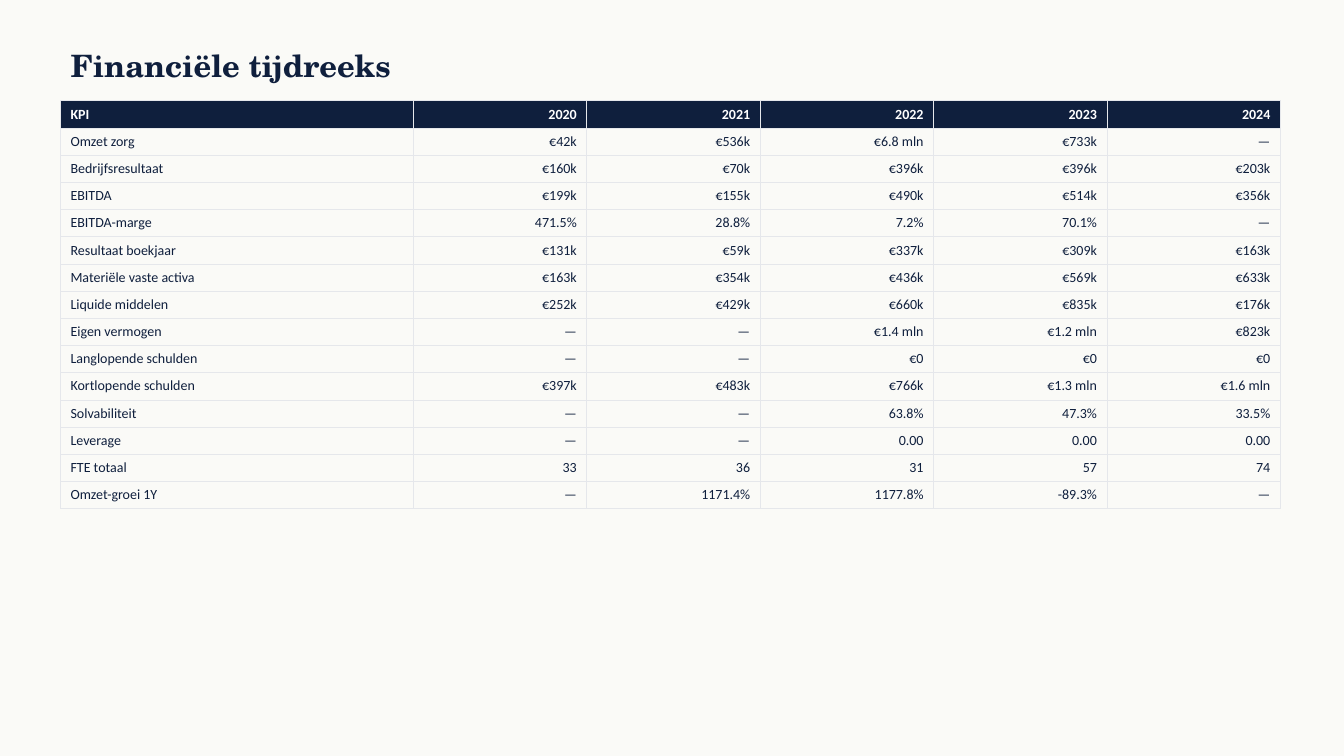
from dataclasses import dataclass

from lxml.etree import SubElement
from pptx import Presentation
from pptx.dml.color import RGBColor
from pptx.enum.text import MSO_ANCHOR, MSO_AUTO_SIZE, PP_ALIGN
from pptx.oxml.ns import qn
from pptx.util import Inches, Pt


@dataclass(frozen=True)
class Theme:
    paper: str = "FAFAF7"
    navy: str = "0F1F3D"
    white: str = "FFFFFF"
    rule: str = "E5E7EB"
    heading_font: str = "TeX Gyre Schola"
    body_font: str = "Calibri"
    heading_size: int = 22
    body_size: int = 10
    rule_width: float = 0.5


THEME = Theme()

KPI_ROWS = [
    ("KPI", "2020", "2021", "2022", "2023", "2024"),
    ("Omzet zorg", "€42k", "€536k", "€6.8 mln", "€733k", "—"),
    ("Bedrijfsresultaat", "€160k", "€70k", "€396k", "€396k", "€203k"),
    ("EBITDA", "€199k", "€155k", "€490k", "€514k", "€356k"),
    ("EBITDA-marge", "471.5%", "28.8%", "7.2%", "70.1%", "—"),
    ("Resultaat boekjaar", "€131k", "€59k", "€337k", "€309k", "€163k"),
    ("Materiële vaste activa", "€163k", "€354k", "€436k", "€569k", "€633k"),
    ("Liquide middelen", "€252k", "€429k", "€660k", "€835k", "€176k"),
    ("Eigen vermogen", "—", "—", "€1.4 mln", "€1.2 mln", "€823k"),
    ("Langlopende schulden", "—", "—", "€0", "€0", "€0"),
    ("Kortlopende schulden", "€397k", "€483k", "€766k", "€1.3 mln", "€1.6 mln"),
    ("Solvabiliteit", "—", "—", "63.8%", "47.3%", "33.5%"),
    ("Leverage", "—", "—", "0.00", "0.00", "0.00"),
    ("FTE totaal", "33", "36", "31", "57", "74"),
    ("Omzet-groei 1Y", "—", "1171.4%", "1177.8%", "-89.3%", "—"),
]
COLUMN_WIDTHS = [3.5] + [1.72] * 5
ROW_HEIGHT = 0.27


def write(frame, text, *, size=THEME.body_size, font=THEME.body_font,
          color=THEME.navy, bold=False, align=PP_ALIGN.LEFT):
    paragraph = frame.paragraphs[0]
    paragraph.alignment = align
    run = paragraph.add_run()
    run.text = text
    run.font.size = Pt(size)
    run.font.name = font
    run.font.bold = bold
    run.font.color.rgb = RGBColor.from_string(color)


def add_borders(cell):
    properties = cell._tc.get_or_add_tcPr()
    for side in ("a:lnL", "a:lnR", "a:lnT", "a:lnB"):
        line = SubElement(properties, qn(side), w=str(Pt(THEME.rule_width)))
        fill = SubElement(line, qn("a:solidFill"))
        SubElement(fill, qn("a:srgbClr"), val=THEME.rule)


prs = Presentation()
prs.slide_width, prs.slide_height = Inches(13.33), Inches(7.5)
slide = prs.slides.add_slide(prs.slide_layouts.get_by_name("Title Only"))
slide.background.fill.solid()
slide.background.fill.fore_color.rgb = RGBColor.from_string(THEME.paper)

heading = slide.shapes.title
heading.left, heading.top = Inches(0.6), Inches(0.4)
heading.width, heading.height = Inches(12), Inches(0.5)
heading.text_frame.auto_size = MSO_AUTO_SIZE.NONE
heading.text_frame.vertical_anchor = MSO_ANCHOR.MIDDLE
write(heading.text_frame, "Financiële tijdreeks", size=THEME.heading_size,
      font=THEME.heading_font, bold=True)

kpi_table = slide.shapes.add_table(
    len(KPI_ROWS), len(COLUMN_WIDTHS), Inches(0.6), Inches(1),
    Inches(sum(COLUMN_WIDTHS)), Inches(ROW_HEIGHT * len(KPI_ROWS))).table
kpi_table.horz_banding = False
for column, width in zip(kpi_table.columns, COLUMN_WIDTHS):
    column.width = Inches(width)

for r, values in enumerate(KPI_ROWS):
    kpi_table.rows[r].height = Inches(ROW_HEIGHT)
    is_header = r == 0
    for c, value in enumerate(values):
        cell = kpi_table.cell(r, c)
        add_borders(cell)
        if is_header:
            cell.fill.solid()
            cell.fill.fore_color.rgb = RGBColor.from_string(THEME.navy)
        else:
            cell.fill.background()
        write(cell.text_frame, value, bold=is_header,
              color=THEME.white if is_header else THEME.navy,
              align=PP_ALIGN.RIGHT if c else PP_ALIGN.LEFT)

prs.save("out.pptx")
